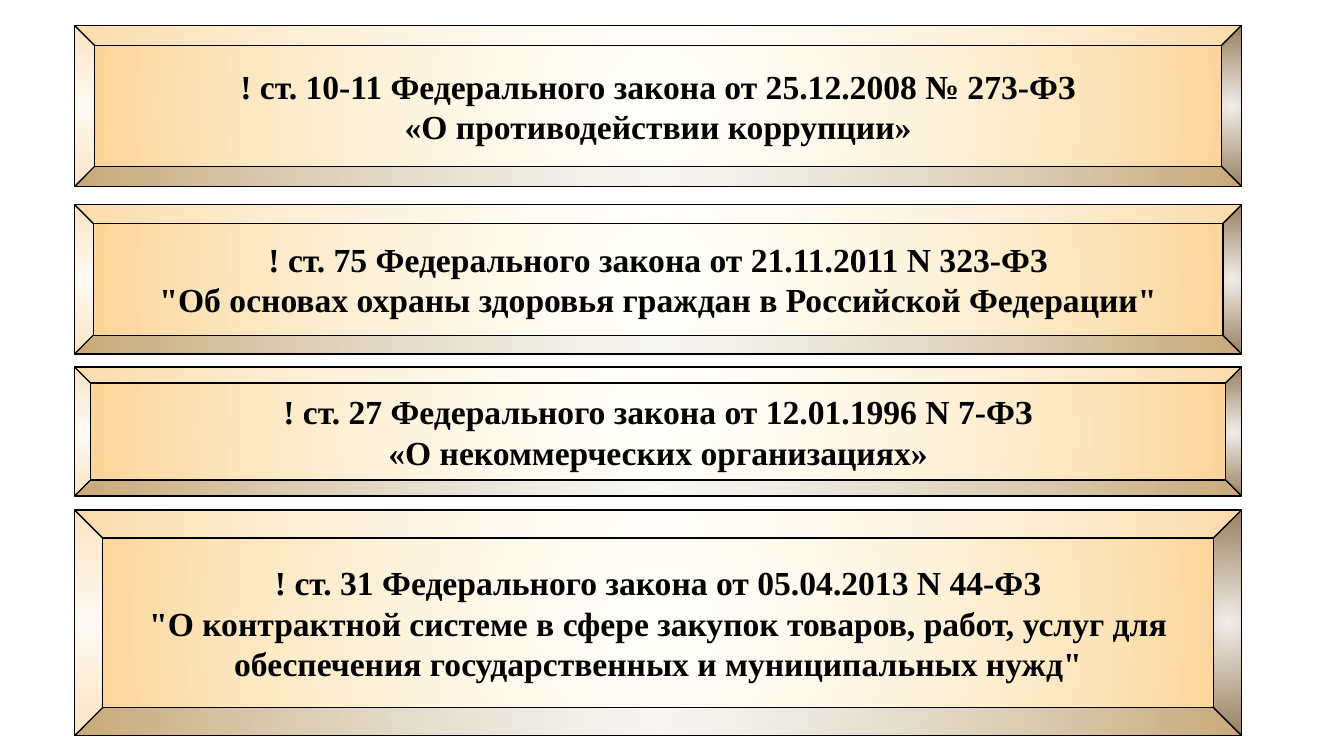
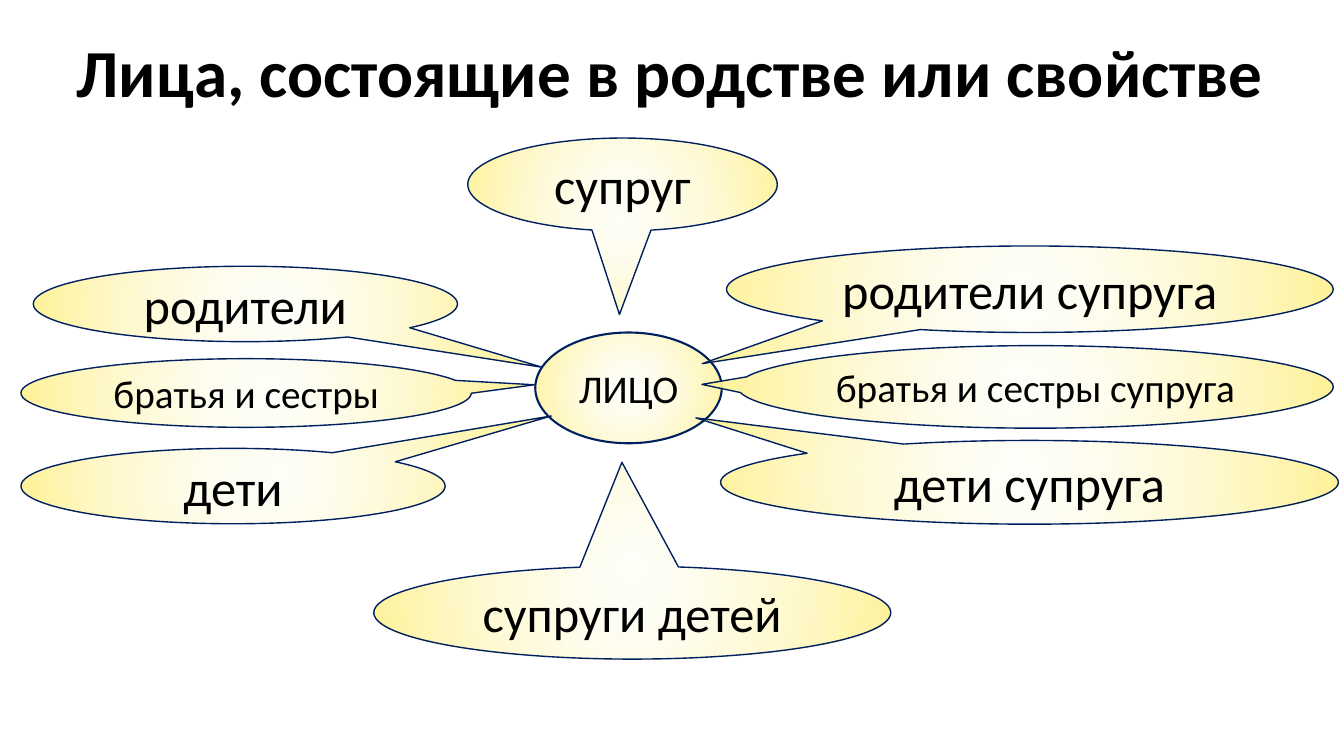
"""Build two slides: the governing laws and the circle of related persons."""
from lxml import etree
from pptx import Presentation
from pptx.dml.color import RGBColor
from pptx.enum.shapes import MSO_SHAPE
from pptx.enum.text import MSO_ANCHOR, MSO_AUTO_SIZE, PP_ALIGN
from pptx.oxml.ns import qn
from pptx.util import Cm, Pt

BEVEL = MSO_SHAPE.BEVEL
OVAL = MSO_SHAPE.OVAL
CALLOUT = MSO_SHAPE.OVAL_CALLOUT
CENTER = PP_ALIGN.CENTER
LEFT = PP_ALIGN.LEFT
MIDDLE = MSO_ANCHOR.MIDDLE
TOP = MSO_ANCHOR.TOP
NO_AUTOFIT = MSO_AUTO_SIZE.NONE

BLACK = RGBColor(0x00, 0x00, 0x00)
NAVY = RGBColor(0x00, 0x20, 0x60)
CREAM = RGBColor(0xFF, 0xFB, 0xDD)
PEACH = RGBColor(0xFD, 0xD5, 0x99)
YELLOW = RGBColor(0xFF, 0xF3, 0x97)

LAW_FONT = {"name": "Times New Roman", "size": Pt(24), "bold": True}
TITLE_FONT = {"name": "Calibri", "size": Pt(48), "bold": True}


def write(frame, lines, align, font_format):
    for number, line in enumerate(lines):
        paragraph = frame.paragraphs[0] if number == 0 else frame.add_paragraph()
        paragraph.alignment = align
        run = paragraph.add_run()
        run.text = line
        run.font.color.rgb = BLACK
        for name, value in font_format.items():
            setattr(run.font, name, value)


def add_glowing(slide, kind, box, edge, outline, weight, lines, font_format):
    shape = slide.shapes.add_shape(kind, *(Cm(length) for length in box))
    shape.shadow.inherit = False
    shape.line.color.rgb = outline
    shape.line.width = Pt(weight)
    shape.fill.gradient()
    for stop, color in zip(shape.fill.gradient_stops, (CREAM, edge)):
        stop.color.rgb = color
    gradient = shape.element.spPr.find(qn("a:gradFill"))
    center_color = gradient.find(".//" + qn("a:srgbClr"))
    etree.SubElement(center_color, qn("a:alpha"), val="13000")
    gradient.remove(gradient.find(qn("a:lin")))
    circle = etree.SubElement(gradient, qn("a:path"), path="circle")
    etree.SubElement(circle, qn("a:fillToRect"), l="50000", t="50000", r="50000", b="50000")
    shape.text_frame.word_wrap = True
    shape.text_frame.vertical_anchor = MIDDLE
    write(shape.text_frame, lines, CENTER, font_format)
    return shape


deck = Presentation()
deck.slide_width = Cm(33.87)
deck.slide_height = Cm(19.05)
title_only, blank = deck.slide_layouts[5], deck.slide_layouts[6]

laws_slide = deck.slides.add_slide(blank)
laws = [
    (0.64, 4.06, ["! ст. 10-11 Федерального закона от 25.12.2008 № 273-ФЗ",
                  "«О противодействии коррупции»"]),
    (5.16, 3.76, ["! ст. 75 Федерального закона от 21.11.2011 N 323-ФЗ",
                  '"Об основах охраны здоровья граждан в Российской Федерации"']),
    (9.25, 3.25, ["! ст. 27 Федерального закона от 12.01.1996 N 7-ФЗ",
                  "«О некоммерческих организациях»"]),
    (12.85, 5.69, ["! ст. 31 Федерального закона от 05.04.2013 N 44-ФЗ",
                   '"О контрактной системе в сфере закупок товаров, работ, услуг для '
                   'обеспечения государственных и муниципальных нужд"']),
]
for top, height, lines in laws:
    add_glowing(laws_slide, BEVEL, (1.88, top, 29.41, height), PEACH, BLACK, 1, lines, LAW_FONT)

family_slide = deck.slides.add_slide(title_only)
title = family_slide.shapes.title
title.left, title.top, title.width, title.height = Cm(1.68), Cm(0.64), Cm(30.6), Cm(2.31)
title_format = {"word_wrap": True, "auto_size": NO_AUTOFIT, "vertical_anchor": TOP}
for name, value in title_format.items():
    setattr(title.text_frame, name, value)
write(title.text_frame, ["Лица, состоящие в родстве или свойстве"], LEFT, TITLE_FONT)

add_glowing(family_slide, OVAL, (13.49, 8.38, 4.7, 2.79), YELLOW, NAVY, 1.5,
            ["ЛИЦО"], {"name": "Calibri", "size": Pt(28)})

relatives = [
    ("супруг", 36, (11.79, 3.48, 7.8, 2.34), (-0.01, 1.4)),
    ("родители супруга", 36, (18.31, 6.2, 15.29, 2.18), (-0.54, 0.86)),
    ("родители", 36, (0.84, 6.71, 10.69, 1.9), (0.7, 0.84)),
    ("братья и сестры супруга", 28, (18.59, 8.71, 15.01, 2.08), (-0.56, -0.03)),
    ("братья и сестры", 28, (0.53, 9.04, 11.35, 1.73), (0.64, -0.12)),
    ("дети супруга", 36, (18.16, 11.1, 15.57, 2.11), (-0.54, -0.77)),
    ("дети", 36, (0.53, 11.3, 10.69, 1.9), (0.75, -0.93)),
    ("супруги детей", 36, (9.42, 14.27, 13.03, 2.34), (-0.02, -1.62)),
]
for relative, size, box, tip in relatives:
    callout = add_glowing(family_slide, CALLOUT, box, YELLOW, NAVY, 1,
                          [relative], {"name": "Calibri", "size": Pt(size)})
    callout.adjustments[0], callout.adjustments[1] = tip

deck.save("out.pptx")
